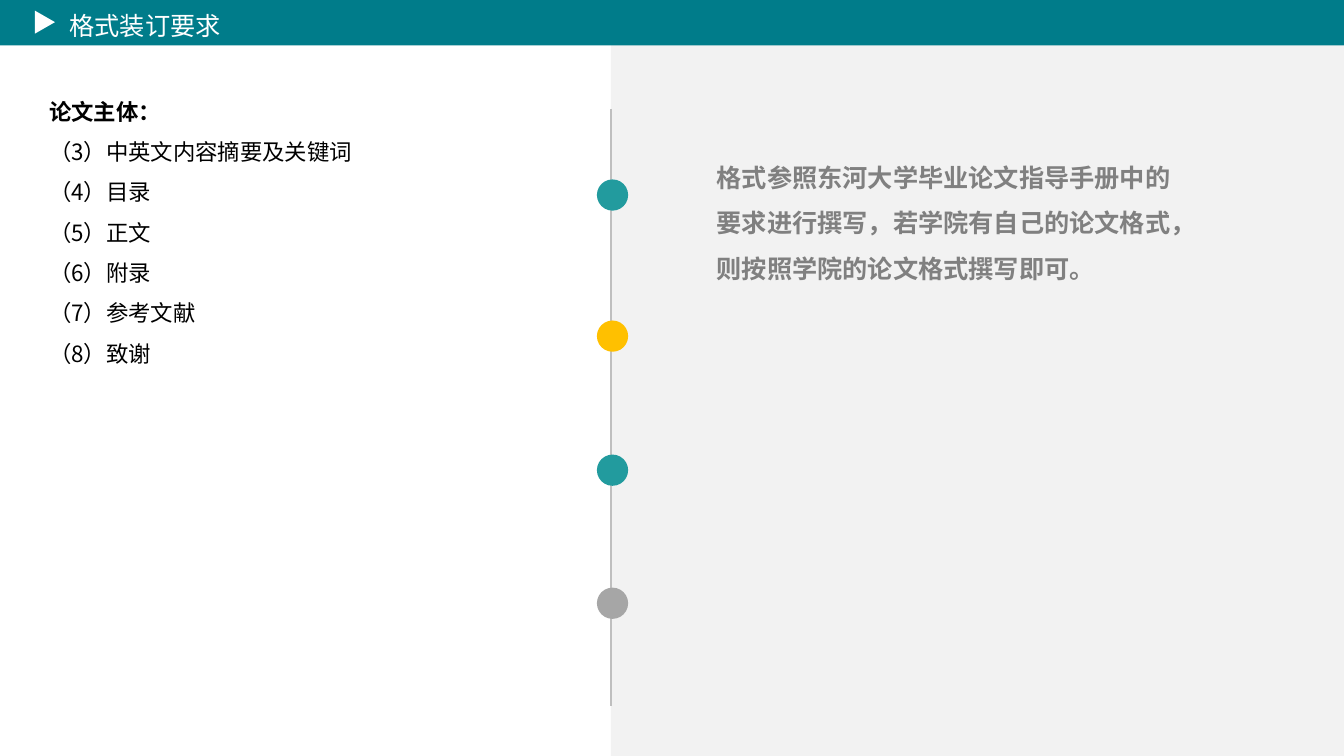
from pptx import Presentation
from pptx.dml.color import RGBColor
from pptx.enum.shapes import MSO_CONNECTOR, MSO_SHAPE
from pptx.enum.text import MSO_ANCHOR, MSO_AUTO_SIZE, PP_ALIGN
from pptx.oxml.xmlchemy import OxmlElement
from pptx.util import Inches, Pt

FONT = "Noto Sans CJK SC"
WHITE = RGBColor(0xFF, 0xFF, 0xFF)
BLACK = RGBColor(0x00, 0x00, 0x00)
PANEL_GREY = RGBColor(0xF2, 0xF2, 0xF2)
LINE_GREY = RGBColor(0xBF, 0xBF, 0xBF)
DOT_GREY = RGBColor(0xA6, 0xA6, 0xA6)
TEXT_GREY = RGBColor(0x80, 0x80, 0x80)
BAND_TEAL = RGBColor(0x00, 0x7C, 0x8A)
DOT_TEAL = RGBColor(0x22, 0x9B, 0x9E)
AMBER = RGBColor(0xFF, 0xC0, 0x00)

DIVIDER_X = 6.06
DOT_LEFT, DOT_SIZE = 5.92, 0.31
DOTS = [(1.78, DOT_TEAL), (3.18, AMBER), (4.51, DOT_TEAL), (5.83, DOT_GREY)]
TITLE = "格式装订要求"
ADVICE = "格式参照东河大学毕业论文指导手册中的要求进行撰写，若学院有自己的论文格式，则按照学院的论文格式撰写即可。"
PARTS_HEADING = "论文主体："
PARTS = ["中英文内容摘要及关键词", "目录", "正文", "附录", "参考文献", "致谢"]
FIRST_PART = 3


def add_filled(page, kind, left, top, width, height, color):
    shape = page.shapes.add_shape(
        kind, Inches(left), Inches(top), Inches(width), Inches(height))
    shape.shadow.inherit = False
    shape.fill.solid()
    shape.fill.fore_color.rgb = color
    shape.line.fill.background()
    return shape


def add_divider(page, x, top, bottom):
    divider = page.shapes.add_connector(
        MSO_CONNECTOR.STRAIGHT, Inches(x), Inches(top), Inches(x), Inches(bottom))
    divider.line.color.rgb = LINE_GREY
    divider.line.width = Pt(0.75)
    divider._element.spPr.append(OxmlElement("a:effectLst"))


def write_lines(frame, lines, size, color):
    """Fill a text frame with (text, bold) lines."""
    frame_format = {
        "word_wrap": True,
        "auto_size": MSO_AUTO_SIZE.SHAPE_TO_FIT_TEXT,
        "vertical_anchor": MSO_ANCHOR.TOP,
    }
    for name, value in frame_format.items():
        setattr(frame, name, value)
    for index, (text, bold) in enumerate(lines):
        para = frame.paragraphs[0] if index == 0 else frame.add_paragraph()
        para_format = {"alignment": PP_ALIGN.LEFT, "line_spacing": 1.5,
                       "space_before": Pt(0)}
        for name, value in para_format.items():
            setattr(para, name, value)
        span = para.add_run()
        span.text = text
        for name, value in {"name": FONT, "size": Pt(size), "bold": bold}.items():
            setattr(span.font, name, value)
        span.font.color.rgb = color
        # East Asian typeface
        typeface = OxmlElement("a:ea")
        typeface.set("typeface", FONT)
        span._r.get_or_add_rPr().append(typeface)


def add_text(page, left, top, width, height, lines, size, color):
    box = page.shapes.add_textbox(
        Inches(left), Inches(top), Inches(width), Inches(height))
    write_lines(box.text_frame, lines, size, color)


def place_title(page):
    title = page.shapes.title
    position = {"left": 0.59, "top": -0.1, "width": 1.94, "height": 0.55}
    for name, value in position.items():
        setattr(title, name, Inches(value))
    write_lines(title.text_frame, [(TITLE, False)], 18, WHITE)
    # Bring the title in front of the band
    page.shapes._spTree.append(title._element)


def main():
    deck = Presentation()
    deck.slide_width, deck.slide_height = Inches(13.33), Inches(7.5)
    page = deck.slides.add_slide(deck.slide_layouts.get_by_name("Title Only"))

    # Right panel and timeline
    add_filled(page, MSO_SHAPE.RECTANGLE, DIVIDER_X, 0, 13.33 - DIVIDER_X, 7.5, PANEL_GREY)
    add_divider(page, DIVIDER_X, 1.08, 7)
    for top, color in DOTS:
        add_filled(page, MSO_SHAPE.OVAL, DOT_LEFT, top, DOT_SIZE, DOT_SIZE, color)
    add_text(page, 7.01, 1.41, 4.74, 1.46, [(ADVICE, True)], 18, TEXT_GREY)

    # Title band
    add_filled(page, MSO_SHAPE.RECTANGLE, 0, 0, 13.33, 0.45, BAND_TEAL)
    place_title(page)
    marker = add_filled(page, MSO_SHAPE.ISOSCELES_TRIANGLE, 0.33, 0.12, 0.23, 0.2, WHITE)
    marker.rotation = 90

    # Parts of the thesis
    lines = [(PARTS_HEADING, True)]
    lines += [(f"（{number}）{part}", False)
              for number, part in enumerate(PARTS, FIRST_PART)]
    add_text(page, 0.39, 0.79, 5.56, 3.71, lines, 16, BLACK)

    deck.save("out.pptx")


if __name__ == "__main__":
    main()
